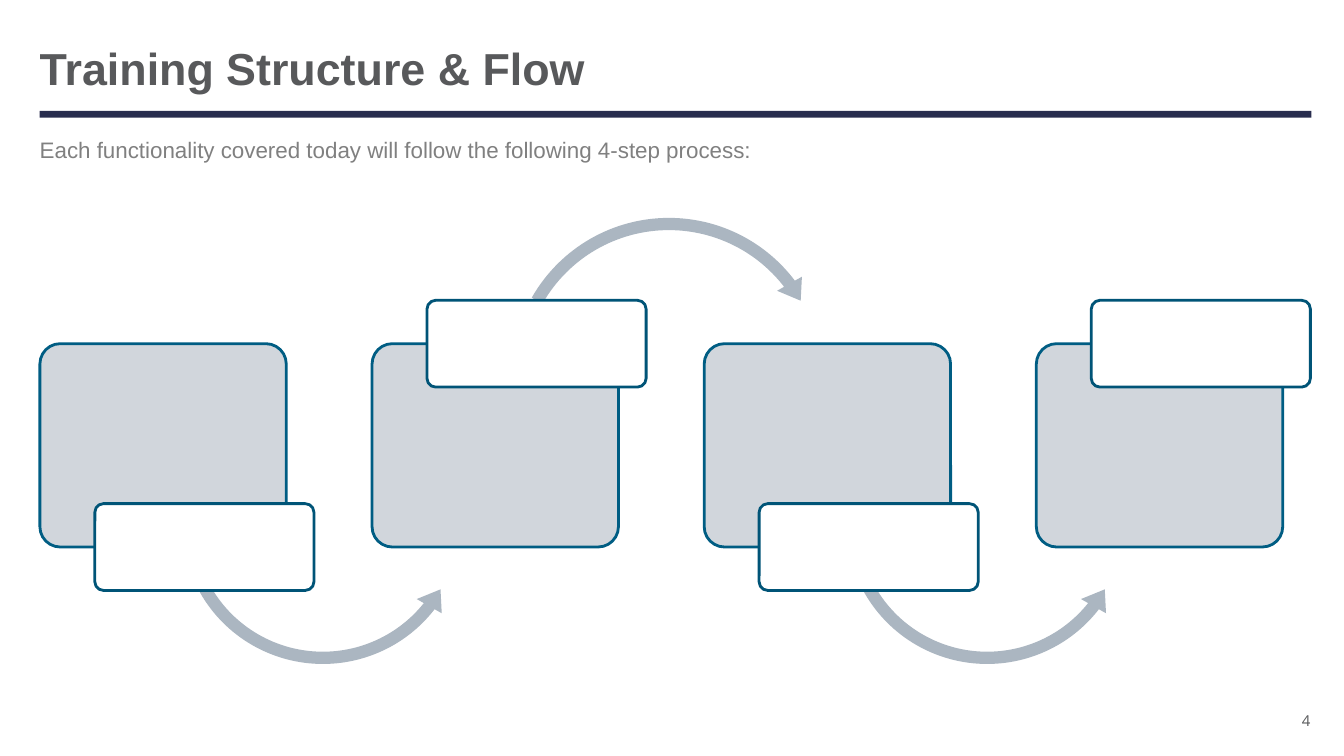
from dataclasses import dataclass

import pptx
import pptx.dml.color
import pptx.enum.shapes
import pptx.enum.text
import pptx.oxml.ns
import pptx.shapes.autoshape
import pptx.slide
import pptx.util
from lxml import etree

Pt = pptx.util.Pt
RGBColor = pptx.dml.color.RGBColor
Shape = pptx.enum.shapes.MSO_SHAPE
Align = pptx.enum.text.PP_ALIGN
Anchor = pptx.enum.text.MSO_ANCHOR

NAVY = RGBColor(0x28, 0x2D, 0x4E)
DARK_GREY = RGBColor(0x58, 0x59, 0x5B)
MID_GREY = RGBColor(0x80, 0x80, 0x80)
PANEL_FILL = RGBColor(0xCC, 0xD2, 0xD9)
PANEL_LINE = RGBColor(0x00, 0x5D, 0x83)
LABEL_LINE = RGBColor(0x00, 0x54, 0x77)
ARROW_FILL = RGBColor(0xAB, 0xB6, 0xC1)
WHITE = RGBColor(0xFF, 0xFF, 0xFF)

STEP_COUNT = 4
STEP_LEFT = 28.5
STEP_PITCH = 237.25
PANEL_TOP = 245.5
PANEL_WIDTH = 176
PANEL_HEIGHT = 145.25
LABEL_OFFSET = 39.25
LABEL_WIDTH = 156.5
LABEL_HEIGHT = 62


@dataclass(frozen=True)
class Box:
    left: float
    top: float
    width: float
    height: float


@dataclass(frozen=True)
class Caption:
    text: str
    box: Box
    size: float
    color: RGBColor
    font: str = "Arial"
    bold: bool = False
    align: Align = Align.LEFT
    anchor: Anchor = Anchor.MIDDLE
    inset: float = 3.6
    line_spacing: float = 1.0


@dataclass(frozen=True)
class FlowArrow:
    kind: Shape
    offset: float
    top: float
    size: float
    adjustments: tuple[float, ...]


CAPTIONS = (
    Caption("Training Structure & Flow", Box(28.4, 29.5, 908, 44), 32,
            DARK_GREY, bold=True, line_spacing=0.85),
    Caption("Each functionality covered today will follow the following 4-step process:",
            Box(28.4, 94, 908, 51), 16, MID_GREY, anchor=Anchor.TOP),
    Caption("4", Box(900, 498.25, 36, 33), 10.7, DARK_GREY,
            font="Open Sans", align=Align.RIGHT, inset=0),
)
LOWER_ARROW = FlowArrow(Shape.LEFT_CIRCULAR_ARROW, 95.25, 266.4, 213.8,
                        (0.041, 5.142, 22.897, 90.245, 0.048))
UPPER_ARROW = FlowArrow(Shape.CIRCULAR_ARROW, 93.6, 149.8, 236.9,
                        (0.037, 4.61, 193.635, 125.755, 0.043))


def add_filled(slide: pptx.slide.Slide, kind: Shape, box: Box, fill: RGBColor,
               line: RGBColor | None = None,
               adjustments: tuple[float, ...] = ()) -> pptx.shapes.autoshape.Shape:
    shape = slide.shapes.add_shape(
        kind, Pt(box.left), Pt(box.top), Pt(box.width), Pt(box.height))
    shape.shadow.inherit = False
    shape.fill.solid()
    shape.fill.fore_color.rgb = fill
    if line is None:
        shape.line.fill.background()
    else:
        shape.line.color.rgb = line
        shape.line.width = Pt(2)
    for index, value in enumerate(adjustments):
        shape.adjustments[index] = value
    return shape


def set_opacity(shape: pptx.shapes.autoshape.Shape, percent: int) -> None:
    qn = pptx.oxml.ns.qn
    color = shape.fill._xPr.find(qn("a:solidFill")).find(qn("a:srgbClr"))
    etree.SubElement(color, qn("a:alpha"), val=str(percent * 1000))


def add_caption(slide: pptx.slide.Slide, caption: Caption) -> None:
    box = caption.box
    frame = slide.shapes.add_textbox(
        Pt(box.left), Pt(box.top), Pt(box.width), Pt(box.height)).text_frame
    frame.word_wrap = True
    frame.vertical_anchor = caption.anchor
    frame.margin_left = frame.margin_right = Pt(0)
    frame.margin_top = frame.margin_bottom = Pt(caption.inset)
    paragraph = frame.paragraphs[0]
    paragraph.text = caption.text
    paragraph.alignment = caption.align
    paragraph.line_spacing = caption.line_spacing
    paragraph.font.name = caption.font
    paragraph.font.size = Pt(caption.size)
    paragraph.font.bold = caption.bold
    paragraph.font.color.rgb = caption.color


def add_step(slide: pptx.slide.Slide, index: int) -> None:
    left = STEP_LEFT + index * STEP_PITCH
    label_below = index % 2 == 0
    panel = add_filled(slide, Shape.ROUNDED_RECTANGLE,
                       Box(left, PANEL_TOP, PANEL_WIDTH, PANEL_HEIGHT),
                       PANEL_FILL, PANEL_LINE, (0.1,))
    set_opacity(panel, 90)
    if index < STEP_COUNT - 1:
        arrow = LOWER_ARROW if label_below else UPPER_ARROW
        add_filled(slide, arrow.kind,
                   Box(left + arrow.offset, arrow.top, arrow.size, arrow.size),
                   ARROW_FILL, adjustments=arrow.adjustments)
    label_middle = PANEL_TOP + (PANEL_HEIGHT if label_below else 0)
    add_filled(slide, Shape.ROUNDED_RECTANGLE,
               Box(left + LABEL_OFFSET, label_middle - LABEL_HEIGHT / 2,
                   LABEL_WIDTH, LABEL_HEIGHT),
               WHITE, LABEL_LINE, (0.1,))


def main() -> None:
    presentation = pptx.Presentation()
    presentation.slide_width = Pt(960)
    presentation.slide_height = Pt(540)
    slide = presentation.slides.add_slide(presentation.slide_layouts[6])
    add_filled(slide, Shape.RECTANGLE, Box(28.4, 79.2, 908.4, 4.8), NAVY)
    for caption in CAPTIONS:
        add_caption(slide, caption)
    for index in range(STEP_COUNT):
        add_step(slide, index)
    presentation.save("out.pptx")


if __name__ == "__main__":
    main()
